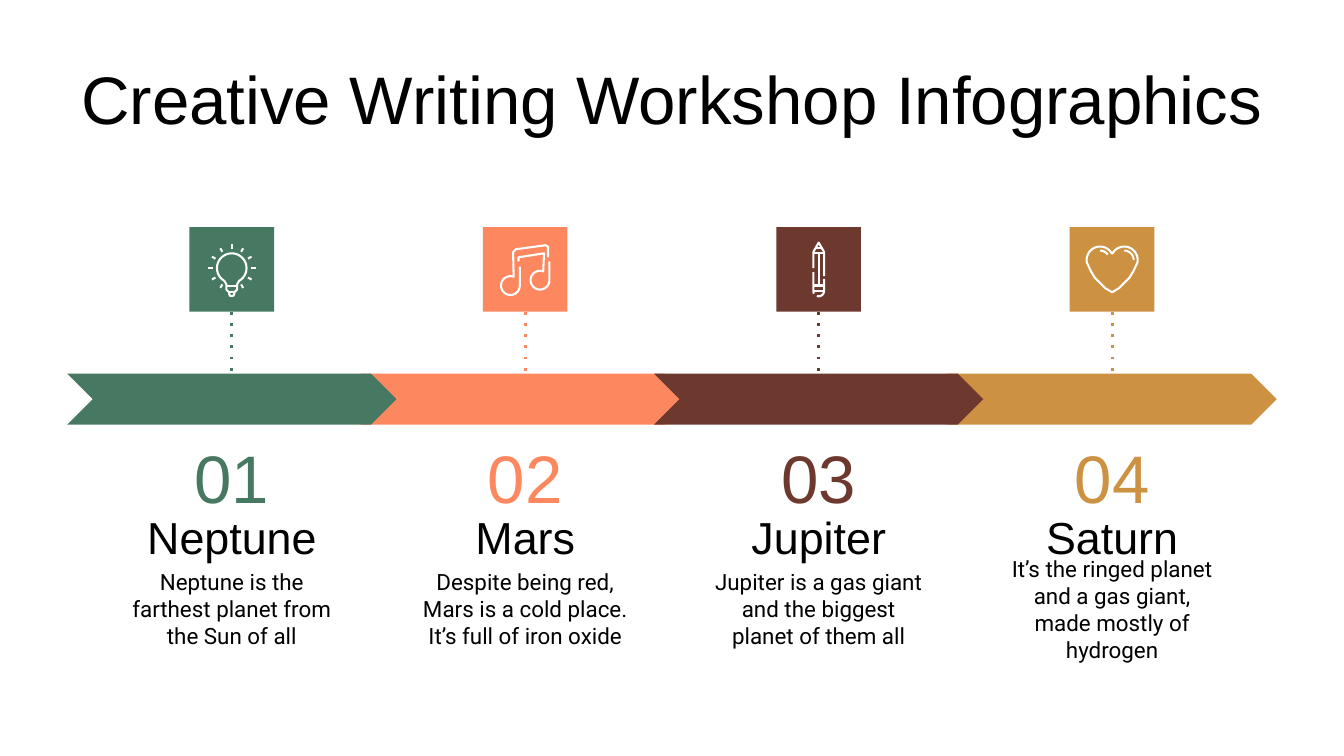
from dataclasses import dataclass
from math import cos, radians, sin

from lxml.etree import SubElement
from pptx import Presentation
from pptx.dml.color import RGBColor
from pptx.enum.dml import MSO_LINE
from pptx.enum.shapes import MSO_CONNECTOR, MSO_SHAPE
from pptx.enum.text import MSO_ANCHOR, PP_ALIGN
from pptx.oxml.ns import qn
from pptx.util import Inches, Pt


@dataclass(frozen=True)
class Theme:
    """Colours, fonts and type sizes of the slide."""
    green: str = "477861"
    coral: str = "FD8860"
    brown: str = "6D392F"
    ochre: str = "CC9141"
    ink: str = "000000"
    white: str = "FFFFFF"
    heading_font: str = "Arial"
    body_font: str = "Roboto"
    title_size: int = 36
    name_size: int = 24
    body_size: int = 12
    dotted_width: float = 1.5
    icon_width: float = 1.1


THEME = Theme()
SLIDE_WIDTH = 10
SLIDE_HEIGHT = SLIDE_WIDTH * 9 / 16
MARGIN = 0.5
CONTENT_WIDTH = SLIDE_WIDTH - 2 * MARGIN
ARROW_WIDTH, ARROW_TOP, ARROW_HEIGHT = 2.45, 2.78, 0.38
PITCH = (CONTENT_WIDTH - ARROW_WIDTH) / 3
TILE_TOP, TILE_SIZE = 1.69, 0.63
LABEL_WIDTH = 1.81


def arc(x, y, radius, start, stop):
    """Return points along a circular arc, angles in degrees clockwise from the right."""
    steps = max(4, abs(stop - start) // 10)
    angles = [radians(start + (stop - start) * i / steps) for i in range(steps + 1)]
    return [(x + radius * cos(a), y + radius * sin(a)) for a in angles]


def mirrored(stroke):
    """Return a stroke flipped about the vertical axis."""
    return [(-x, y) for x, y in stroke]


def bulb_strokes():
    """Return the strokes of a shining light bulb."""
    glass = [(-0.04, 0.11)] + arc(0, -0.01, 0.11, 120, 420) + [(0.04, 0.11)]
    base = [(-0.04, 0.11), (-0.04, 0.15), (-0.02, 0.17), (-0.02, 0.18), (-0.01, 0.2)]
    collars = [[(-0.04, 0.12), (0.04, 0.12)], [(-0.02, 0.17), (0.02, 0.17)],
               [(-0.01, 0.2), (0.01, 0.2)]]
    rays = []
    for angle in range(120, 421, 30):
        reach = 0.18 if angle % 90 == 0 else 0.17
        a = radians(angle)
        rays.append([(r * cos(a), r * sin(a) - 0.01) for r in (0.14, reach)])
    return [glass, base, mirrored(base)] + collars + rays


def music_strokes():
    """Return the strokes of two beamed notes."""
    left_note = [(-0.04, -0.02)] + arc(-0.11, 0.12, 0.07, 0, 290) + [
        (-0.09, -0.13), (-0.07, -0.15), (0.15, -0.18), (0.17, -0.17), (0.17, -0.09)]
    right_note = [(0.18, -0.06)] + arc(0.11, 0.08, 0.07, 0, 290) + [
        (0.14, -0.12), (-0.05, -0.09), (-0.05, -0.06)]
    return [left_note, right_note]


def pencil_strokes():
    """Return the strokes of an upright pencil."""
    body = [(-0.04, -0.01), (-0.04, -0.13), (0, -0.2), (0.04, -0.13), (0.04, 0.05)]
    bands = [[(-half, y), (half, y)]
             for half, y in ((0.02, -0.16), (0.04, -0.12), (0.04, 0.12), (0.04, 0.16))]
    eraser = [(0.04, 0.07)] + arc(0, 0.16, 0.04, 0, 110)
    left_edge = [(-0.04, 0.02)] + arc(0, 0.16, 0.04, 180, 150)
    return [body, [(0, -0.12), (0, 0.12)], eraser, left_edge] + bands


def heart_strokes():
    """Return the strokes of a heart with two highlights."""
    half = arc(0.09, -0.07, 0.1, 210, 370) + [
        (0.16, 0.01), (0.13, 0.06), (0.09, 0.1), (0.05, 0.14), (0, 0.17)]
    outline = half + mirrored(half)[::-1] + half[:1]
    return [outline, arc(0.09, -0.07, 0.07, 270, 360), arc(-0.09, -0.07, 0.07, 270, 325)]


def add_text(slide, text, box, font, size, color, anchor=MSO_ANCHOR.MIDDLE):
    """Add a centred text box."""
    frame = slide.shapes.add_textbox(*map(Inches, box)).text_frame
    frame.word_wrap = True
    frame.vertical_anchor = anchor
    frame.margin_left = frame.margin_right = Inches(0.1)
    frame.margin_top = frame.margin_bottom = Inches(0.1)
    paragraph = frame.paragraphs[0]
    paragraph.alignment = PP_ALIGN.CENTER
    run = paragraph.add_run()
    run.text = text
    run.font.name = font
    run.font.size = Pt(size)
    run.font.color.rgb = RGBColor.from_string(color)


def add_block(slide, kind, box, color):
    """Add a flat shape filled with one colour."""
    block = slide.shapes.add_shape(kind, *map(Inches, box))
    block.shadow.inherit = False
    block.fill.solid()
    block.fill.fore_color.rgb = RGBColor.from_string(color)
    block.line.fill.background()
    return block


def add_dotted_line(slide, tile, center, color):
    """Add a dotted line from a tile down to the arrow band."""
    link = slide.shapes.add_connector(
        MSO_CONNECTOR.STRAIGHT, Inches(center), Inches(TILE_TOP + TILE_SIZE),
        Inches(center), Inches(ARROW_TOP + ARROW_HEIGHT / 2))
    link.begin_connect(tile, 2)
    link.line.color.rgb = RGBColor.from_string(color)
    link.line.width = Pt(THEME.dotted_width)
    link.line.dash_style = MSO_LINE.ROUND_DOT
    properties = link._element.spPr
    properties.find(".//" + qn("a:prstDash")).set("val", "dot")
    SubElement(properties, qn("a:effectLst"))


def add_icon(slide, strokes, center):
    """Add a white line icon in the middle of a tile."""
    middle = TILE_TOP + TILE_SIZE / 2
    placed = [[(Inches(center + x), Inches(middle + y)) for x, y in stroke]
              for stroke in strokes]
    builder = slide.shapes.build_freeform(*placed[0][0])
    for stroke in placed:
        if stroke is not placed[0]:
            builder.move_to(*stroke[0])
        builder.add_line_segments(stroke[1:], close=False)
    icon = builder.convert_to_shape()
    icon.shadow.inherit = False
    icon.fill.background()
    icon.line.color.rgb = RGBColor.from_string(THEME.white)
    icon.line.width = Pt(THEME.icon_width)


def add_step(slide, number, planet, description, color, strokes):
    """Add one numbered step of the timeline."""
    left = MARGIN + PITCH * (number - 1)
    center = left + ARROW_WIDTH / 2
    label_left = center - LABEL_WIDTH / 2
    tile = add_block(slide, MSO_SHAPE.RECTANGLE,
                     (center - TILE_SIZE / 2, TILE_TOP, TILE_SIZE, TILE_SIZE), color)
    add_dotted_line(slide, tile, center, color)
    add_block(slide, MSO_SHAPE.CHEVRON, (left, ARROW_TOP, ARROW_WIDTH, ARROW_HEIGHT), color)
    add_icon(slide, strokes, center)
    labels = (
        (f"{number:02}", 3.36, 0.37, THEME.heading_font, THEME.title_size, color),
        (planet, 3.81, 0.37, THEME.heading_font, THEME.name_size, THEME.ink),
        (description, 4.16, 0.74, THEME.body_font, THEME.body_size, THEME.ink),
    )
    for text, top, height, font, size, ink in labels:
        add_text(slide, text, (label_left, top, LABEL_WIDTH, height), font, size, ink)


def main():
    """Build the slide and save it."""
    deck = Presentation()
    deck.slide_width, deck.slide_height = Inches(SLIDE_WIDTH), Inches(SLIDE_HEIGHT)
    slide = deck.slides.add_slide(deck.slide_layouts[6])
    add_text(slide, "Creative Writing Workshop Infographics",
             (MARGIN, 0.33, CONTENT_WIDTH, 0.63), THEME.heading_font,
             THEME.title_size, THEME.ink, MSO_ANCHOR.TOP)
    steps = (
        (2, "Mars", "Despite being red, Mars is a cold place. It’s full of iron oxide",
         THEME.coral, music_strokes()),
        (4, "Saturn", "It’s the ringed planet and a gas giant, made mostly of hydrogen",
         THEME.ochre, heart_strokes()),
        (3, "Jupiter", "Jupiter is a gas giant and the biggest planet of them all",
         THEME.brown, pencil_strokes()),
        (1, "Neptune", "Neptune is the farthest planet from the Sun of all",
         THEME.green, bulb_strokes()),
    )
    for step in steps:
        add_step(slide, *step)
    deck.save("out.pptx")


if __name__ == "__main__":
    main()
